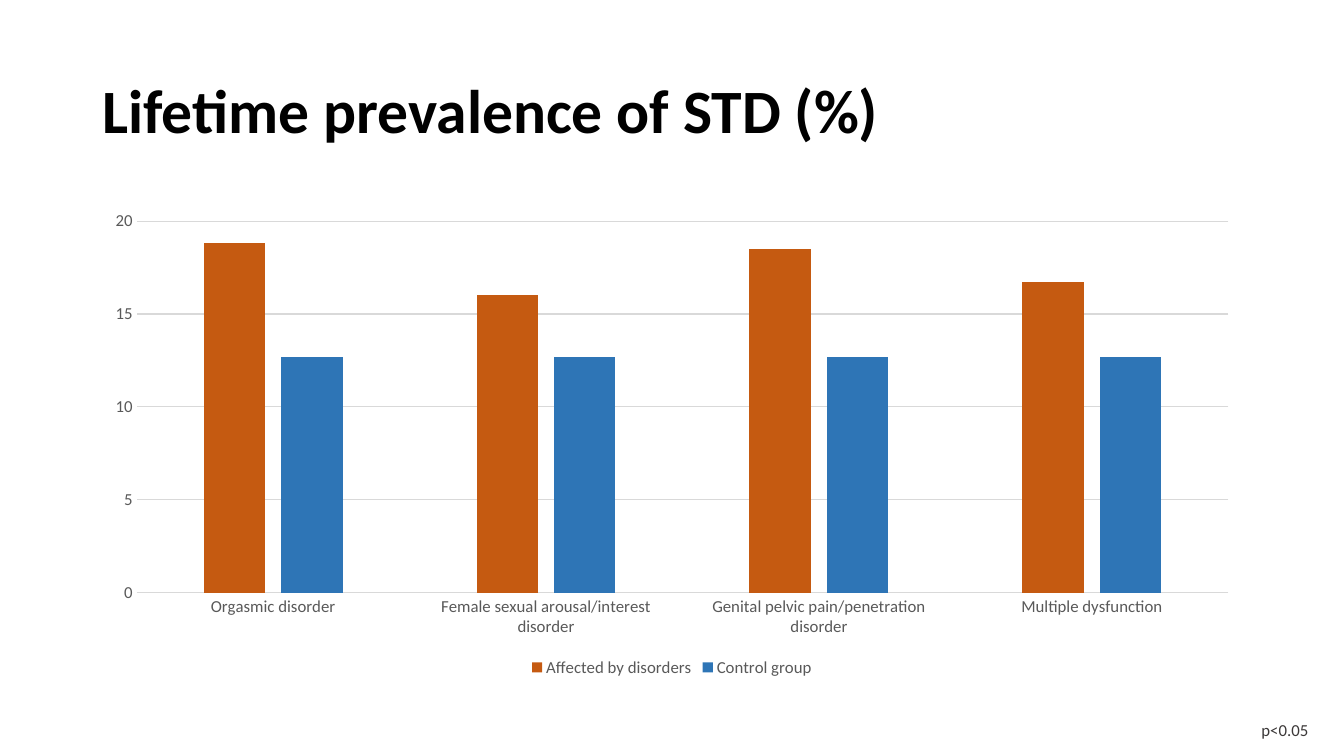
from pptx import Presentation
from pptx.chart.data import CategoryChartData
from pptx.dml.color import RGBColor
from pptx.enum.chart import XL_CHART_TYPE, XL_LEGEND_POSITION, XL_TICK_MARK
from pptx.enum.text import MSO_ANCHOR
from pptx.util import Cm, Pt

FONT = "Calibri"
COLORS = {
    "title": "000000",
    "note": "3B3838",
    "label": "595959",
    "grid": "D9D9D9",
    "affected": "C55A11",
    "control": "2E75B6",
}


def style_font(font, size, color, bold=False):
    font.name = FONT
    font.size = Pt(size)
    font.bold = bold
    font.color.rgb = RGBColor.from_string(COLORS[color])


def add_text(slide, text, left, top, width, height, size, color, bold=False):
    """Add a one-line text box, centred vertically, and return its paragraph."""
    box = slide.shapes.add_textbox(Cm(left), Cm(top), Cm(width), Cm(height))
    frame = box.text_frame
    frame.word_wrap = True
    frame.vertical_anchor = MSO_ANCHOR.MIDDLE
    paragraph = frame.paragraphs[0]
    run = paragraph.add_run()
    run.text = text
    style_font(run.font, size, color, bold)
    return paragraph


presentation = Presentation()
presentation.slide_width = Cm(33.87)
presentation.slide_height = Cm(19.05)
slide = presentation.slides.add_slide(presentation.slide_layouts[6])

title = add_text(slide, "Lifetime prevalence of STD (%)",
                 2.33, 1.01, 29.21, 3.68, 44, "title", bold=True)
title.line_spacing = 0.9

# Prevalence chart
chart_data = CategoryChartData()
chart_data.categories = [
    "Orgasmic disorder",
    "Female sexual arousal/interest disorder",
    "Genital pelvic pain/penetration disorder",
    "Multiple dysfunction",
]
chart_data.add_series("Affected by disorders", (18.8, 16, 18.5, 16.7))
chart_data.add_series("Control group", (12.7,) * 4)
chart = slide.shapes.add_chart(
    XL_CHART_TYPE.COLUMN_CLUSTERED,
    Cm(2.33), Cm(5.08), Cm(29.21), Cm(12.09), chart_data).chart
chart.has_title = False
style_font(chart.font, 12, "label")

plot = chart.plots[0]
plot.gap_width = 219
plot.overlap = -27
plot.vary_by_categories = False
for series, color in zip(plot.series, ("affected", "control")):
    series.format.fill.solid()
    series.format.fill.fore_color.rgb = RGBColor.from_string(COLORS[color])
    series.invert_if_negative = False

category_axis, value_axis = chart.category_axis, chart.value_axis
for axis in (category_axis, value_axis):
    axis.major_tick_mark = XL_TICK_MARK.NONE
    axis.minor_tick_mark = XL_TICK_MARK.NONE
    style_font(axis.tick_labels.font, 12, "label")
value_axis.minimum_scale = 0
value_axis.maximum_scale = 20
value_axis.major_unit = 5
value_axis.has_major_gridlines = True
value_axis.format.line.fill.background()
for line in (category_axis.format.line, value_axis.major_gridlines.format.line):
    line.color.rgb = RGBColor.from_string(COLORS["grid"])
    line.width = Pt(0.75)

chart.has_legend = True
chart.legend.position = XL_LEGEND_POSITION.BOTTOM
chart.legend.include_in_layout = False
style_font(chart.legend.font, 12, "label")

add_text(slide, "p<0.05", 31.54, 18.01, 4.37, 0.77, 12, "note")

presentation.save("out.pptx")
